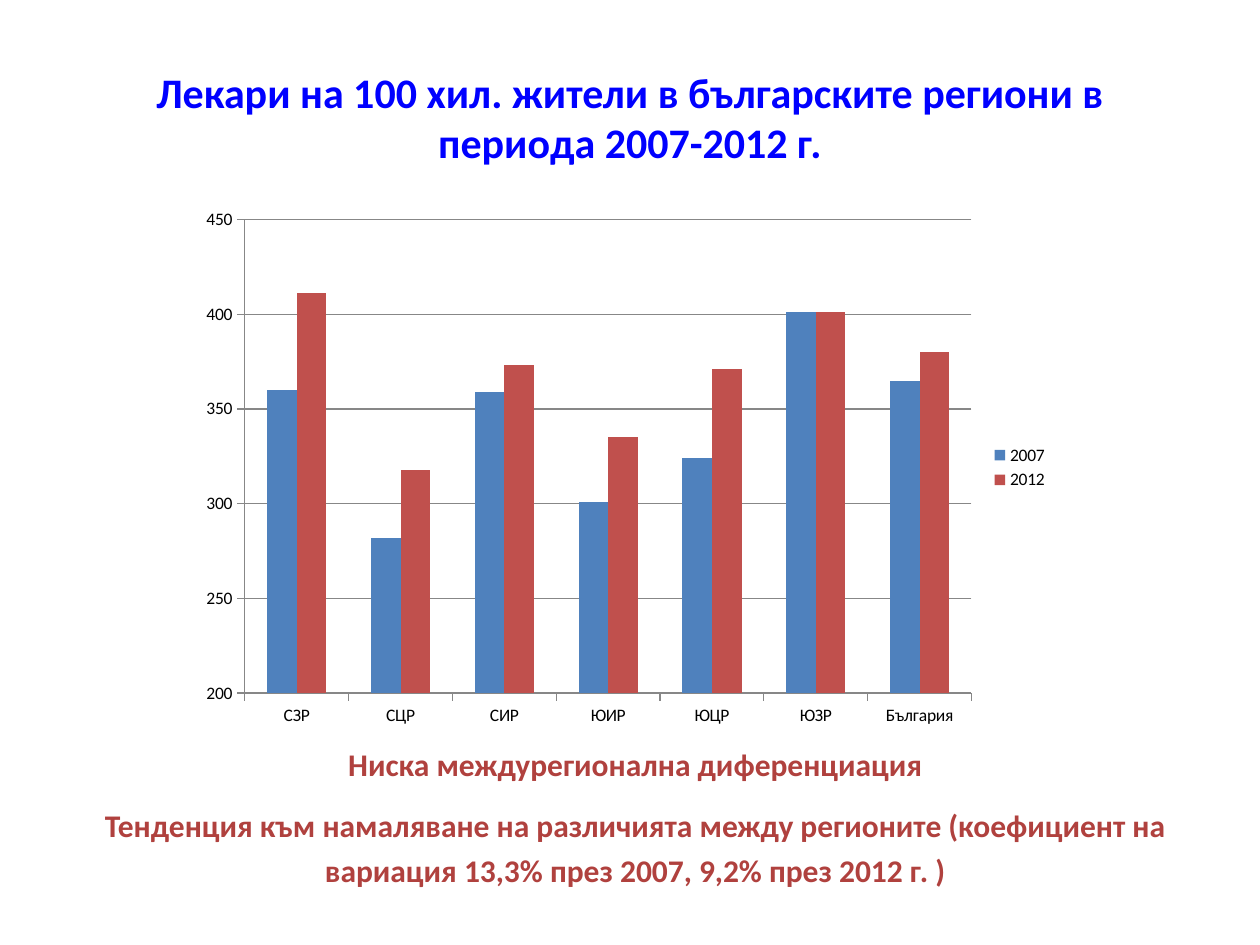
"""Builds a slide comparing doctors per 100,000 people by Bulgarian region."""
from pptx import Presentation, util as u
from pptx.chart.data import CategoryChartData
from pptx.dml.color import RGBColor
from pptx.enum import chart as ch, text

PX = u.Inches(1) // 126
BLUE = RGBColor(0x00, 0x00, 0xFF)
BRICK = RGBColor(0xB0, 0x41, 0x3E)
BLACK = RGBColor(0x00, 0x00, 0x00)
GRAY = RGBColor(0x87, 0x87, 0x87)
BAR_BLUE = RGBColor(0x4F, 0x81, 0xBD)
BAR_RED = RGBColor(0xC0, 0x50, 0x4D)


class Deck:
    """Holds the font and the current slide."""

    font = "Calibri"

    def __init__(self, width, height):
        self.prs = Presentation()
        self.prs.slide_width, self.prs.slide_height = width * PX, height * PX
        self.s = self.prs.slides.add_slide(self.prs.slide_layouts[6])

    def style(self, font, size, color, bold=False):
        font.name, font.size, font.bold = self.font, u.Pt(size), bold
        font.color.rgb = color

    def text(self, box, lines, size, color, anchor=text.MSO_ANCHOR.TOP, spacing=1.0, before=0):
        tf = self.s.shapes.add_textbox(*(v * PX for v in box)).text_frame
        tf.word_wrap = True
        tf.vertical_anchor = anchor
        for i, line in enumerate(lines):
            p = tf.add_paragraph() if i else tf.paragraphs[0]
            p.text = line
            p.alignment = text.PP_ALIGN.CENTER
            p.line_spacing, p.space_before = spacing, u.Pt(before)
            self.style(p.font, size, color, True)

    def columns(self, box, categories, series, low, high, step):
        data = CategoryChartData()
        data.categories = categories
        for name, values, _ in series:
            data.add_series(name, values)
        chart = self.s.shapes.add_chart(
            ch.XL_CHART_TYPE.COLUMN_CLUSTERED, *(v * PX for v in box), data).chart
        self.style(chart.font, 10, BLACK)
        chart.has_title = False
        chart.has_legend = True
        chart.legend.position = ch.XL_LEGEND_POSITION.RIGHT
        chart.legend.include_in_layout = False
        plot = chart.plots[0]
        plot.gap_width, plot.overlap, plot.vary_by_categories = 150, 0, False
        for bars, (_, _, color) in zip(plot.series, series):
            bars.format.fill.solid()
            bars.format.fill.fore_color.rgb = color
        axis = chart.value_axis
        axis.minimum_scale, axis.maximum_scale, axis.major_unit = low, high, step
        axis.has_major_gridlines = True
        for part in (axis, chart.category_axis, axis.major_gridlines):
            part.format.line.color.rgb = GRAY
            part.format.line.width = u.Pt(0.75)
        for part in (axis, chart.category_axis):
            part.major_tick_mark = ch.XL_TICK_MARK.OUTSIDE


def main():
    deck = Deck(1260, 945)
    deck.text((63, 38, 1134, 157),
              ["Лекари на 100 хил. жители в българските региони в периода 2007-2012 г."],
              24, BLUE, anchor=text.MSO_ANCHOR.MIDDLE)
    deck.columns((189, 199, 872, 537),
                 ["СЗР", "СЦР", "СИР", "ЮИР", "ЮЦР", "ЮЗР", "България"],
                 [("2007", (360, 282, 359, 301, 324, 401, 365), BAR_BLUE),
                  ("2012", (411, 318, 373, 335, 371, 401, 380), BAR_RED)],
                 200, 450, 50)
    deck.text((42, 731, 1187, 169),
              ["Ниска междурегионална диференциация",
               "Тенденция към намаляване на различията между регионите "
               "(коефициент на вариация 13,3% през 2007, 9,2% през 2012 г. )"],
              18, BRICK, spacing=1.2, before=9)
    deck.prs.save("out.pptx")


if __name__ == "__main__":
    main()
